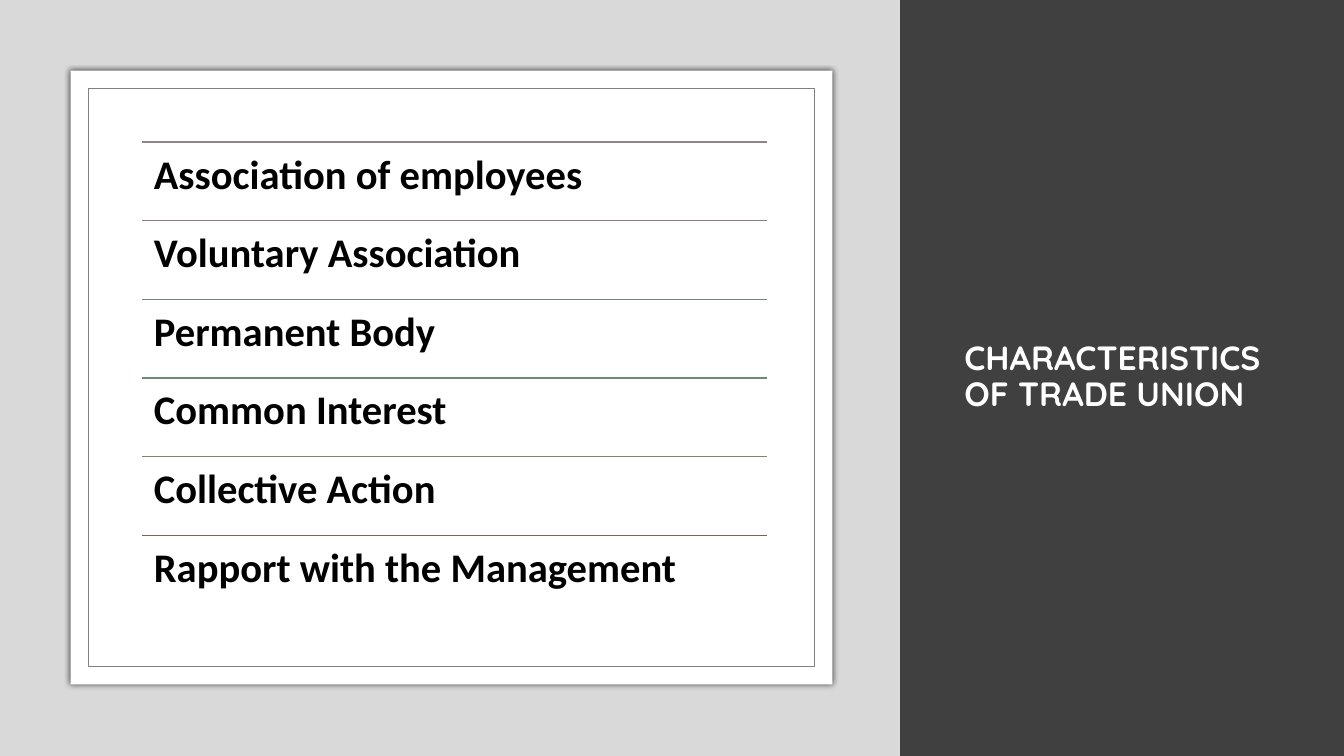
from dataclasses import dataclass

from lxml import etree
from pptx import Presentation
from pptx.dml.color import RGBColor
from pptx.enum.shapes import MSO_CONNECTOR, MSO_SHAPE
from pptx.enum.text import MSO_ANCHOR, MSO_AUTO_SIZE, PP_ALIGN
from pptx.oxml.ns import qn
from pptx.util import Cm, Pt

RECT = MSO_SHAPE.RECTANGLE
STRAIGHT = MSO_CONNECTOR.STRAIGHT
TOP, MIDDLE = MSO_ANCHOR.TOP, MSO_ANCHOR.MIDDLE
LEFT = PP_ALIGN.LEFT
NO_FIT = MSO_AUTO_SIZE.NONE


@dataclass(frozen=True)
class Theme:
    """Colours, fonts and type sizes of the slide."""
    dark: str = "404040"
    grey: str = "D9D9D9"
    white: str = "FFFFFF"
    black: str = "000000"
    frame: str = "808080"
    rules: tuple = ("918485", "8A7C8F", "737F8E", "6B8B77", "818864", "855D5D")
    title_font: str = "Quicksand"
    body_font: str = "Calibri"
    title_size: int = 24
    body_size: int = 29


THEME = Theme()
TITLE = "CHARACTERISTICS OF TRADE UNION"
ITEMS = (
    "Association of employees",
    "Voluntary Association",
    "Permanent Body",
    "Common Interest",
    "Collective Action",
    "Rapport with the Management",
)


def set_attrs(obj, formats):
    """Set each attribute named in formats on obj."""
    for name, value in formats.items():
        setattr(obj, name, value)


def add_rect(s, box, fill, line=None):
    """Add a flat rectangle with an optional thin outline."""
    sp = s.shapes.add_shape(RECT, *map(Cm, box))
    sp.shadow.inherit = False
    sp.fill.solid()
    sp.fill.fore_color.rgb = RGBColor.from_string(fill)
    if line:
        sp.line.color.rgb = RGBColor.from_string(line)
        sp.line.width = Pt(0.5)
    else:
        sp.line.fill.background()
    return sp


def add_glow_shadow(sp, blur, alpha):
    """Give a shape a soft black shadow on all sides."""
    effects = sp._element.spPr.find(qn("a:effectLst"))
    shadow = etree.SubElement(effects, qn("a:outerShdw"), blurRad=str(Pt(blur)), algn="ctr")
    colour = etree.SubElement(shadow, qn("a:srgbClr"), val=THEME.black)
    etree.SubElement(colour, qn("a:alpha"), val=str(alpha * 1000))


def write_text(tf, text, anchor, font, size, colour):
    """Write one bold, left-aligned paragraph into a text frame."""
    set_attrs(tf, {"word_wrap": True, "auto_size": NO_FIT, "vertical_anchor": anchor})
    p = tf.paragraphs[0]
    set_attrs(p, {"alignment": LEFT, "line_spacing": 0.9})
    r = p.add_run()
    r.text = text
    set_attrs(r.font, {"name": font, "size": Pt(size), "bold": True})
    r.font.color.rgb = RGBColor.from_string(colour)


def add_title(s, box):
    """Place the title placeholder in front of the dark backdrop."""
    sp = s.shapes.title
    set_attrs(sp, dict(zip(("left", "top", "width", "height"), map(Cm, box))))
    write_text(sp.text_frame, TITLE, MIDDLE, THEME.title_font, THEME.title_size, THEME.white)
    s.shapes._spTree.append(sp._element)


def add_card(s, box, inset):
    """Draw the white card with its shadow and inner frame."""
    left, top, width, height = box
    add_glow_shadow(add_rect(s, box, THEME.white), blur=4, alpha=66)
    inner = (left + inset, top + inset, width - 2 * inset, height - 2 * inset)
    add_rect(s, inner, THEME.white, THEME.frame)


def add_ruled_list(s, box):
    """Stack the items in equal rows, each under a coloured rule."""
    left, top, width, height = box
    row = height / len(ITEMS)
    for i, (text, colour) in enumerate(zip(ITEMS, THEME.rules)):
        y = top + i * row
        rule = s.shapes.add_connector(STRAIGHT, Cm(left), Cm(y), Cm(left + width), Cm(y))
        rule.line.color.rgb = RGBColor.from_string(colour)
        rule.line.width = Pt(1)
        etree.SubElement(rule._element.spPr, qn("a:effectLst"))
        tf = s.shapes.add_textbox(Cm(left), Cm(y), Cm(width), Cm(row)).text_frame
        margins = ("margin_left", "margin_top", "margin_right", "margin_bottom")
        set_attrs(tf, dict.fromkeys(margins, Cm(0.3)))
        write_text(tf, text, TOP, THEME.body_font, THEME.body_size, THEME.black)


def build_slide(prs, box):
    """Build the slide: title on the dark side, card list on the light side."""
    left, top, width, height = box
    s = prs.slides.add_slide(prs.slide_layouts[5])
    add_rect(s, box, THEME.dark)
    add_title(s, (left + 24.05, top + 1.78, 8.03, 15.47))
    add_rect(s, (left, top, 22.68, height), THEME.grey)
    add_card(s, (left + 1.78, top + 1.78, 19.2, 15.47), inset=0.46)
    add_ruled_list(s, (left + 3.58, top + 3.58, 15.75, 11.89))


def main():
    """Create and save the presentation."""
    prs = Presentation()
    set_attrs(prs, {"slide_width": Cm(33.87), "slide_height": Cm(19.05)})
    build_slide(prs, (0, 0, 33.87, 19.05))
    prs.save("out.pptx")


if __name__ == "__main__":
    main()
